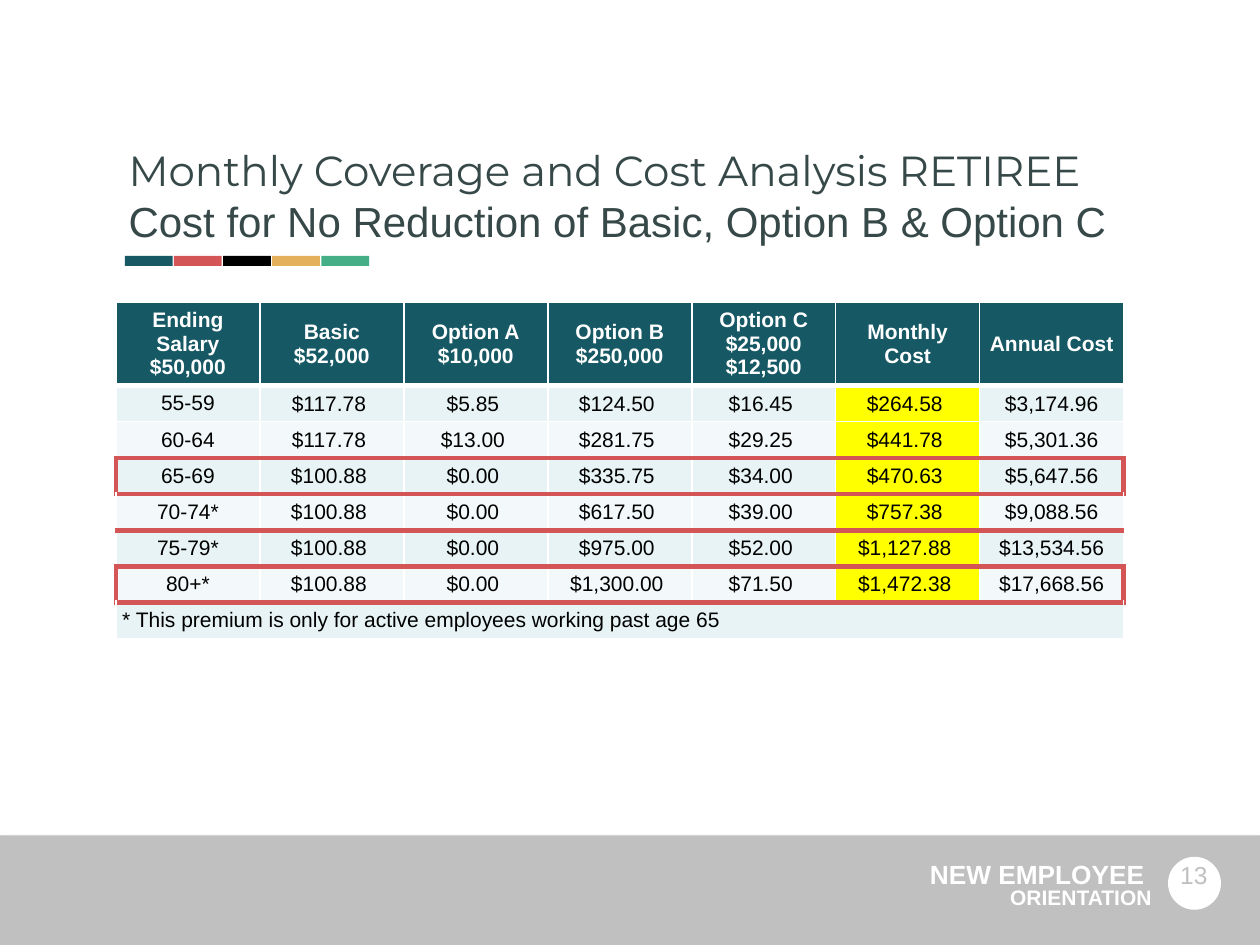
from lxml.etree import SubElement
from pptx import Presentation
from pptx.dml.color import RGBColor
from pptx.enum.shapes import MSO_SHAPE
from pptx.enum.text import MSO_ANCHOR, MSO_AUTO_SIZE, PP_ALIGN
from pptx.oxml import parse_xml
from pptx.oxml.ns import nsdecls, qn
from pptx.util import Inches, Pt

TEAL, RED, WHITE, GRAY = "165864", "D35556", "FFFFFF", "C0C0C0"
BAND_ODD, BAND_EVEN, YELLOW = "E7F3F4", "F3F9FA", "FFFF00"
ACCENTS = [TEAL, RED, "000000", "E4B05C", "46AE86"]

HEADERS = [["Ending Salary\n$50,000"], ["Basic\n$52,000"], ["Option A\n$10,000"],
           ["Option B\n$250,000"], ["Option C", "$25,000", "$12,500"],
           ["Monthly Cost"], ["Annual Cost"]]
COSTS = [
    ["55-59", "$117.78", "$5.85", "$124.50", "$16.45", "$264.58", "$3,174.96"],
    ["60-64", "$117.78", "$13.00", "$281.75", "$29.25", "$441.78", "$5,301.36"],
    ["65-69", "$100.88", "$0.00", "$335.75", "$34.00", "$470.63", "$5,647.56"],
    ["70-74*", "$100.88", "$0.00", "$617.50", "$39.00", "$757.38", "$9,088.56"],
    ["75-79*", "$100.88", "$0.00", "$975.00", "$52.00", "$1,127.88", "$13,534.56"],
    ["80+*", "$100.88", "$0.00", "$1,300.00", "$71.50", "$1,472.38", "$17,668.56"],
]
FOOTNOTE = "* This premium is only for active employees working past age 65"
BOXED_ROWS = (3, 6)
RED_RULES = (2, 3, 4, 5, 6)  # rows with a red line below them
MONTHLY_COLUMN = 5


def color(hex_value):
    return RGBColor.from_string(hex_value)


def write(frame, lines, sizes=(12,), fonts=("Arial",), ink="000000", bold=False,
          align=PP_ALIGN.LEFT, spacing=None):
    """Write one paragraph per line; sizes and fonts repeat over the lines."""
    for i, line in enumerate(lines):
        paragraph = frame.paragraphs[0] if i == 0 else frame.add_paragraph()
        paragraph.alignment = align
        if spacing:
            paragraph.line_spacing = spacing
        for j, part in enumerate(line.split("\n")):
            if j:
                paragraph.add_line_break()
            run = paragraph.add_run()
            run.text = part
            run.font.size = Pt(sizes[i % len(sizes)])
            run.font.name = fonts[i % len(fonts)]
            run.font.bold = bold
            run.font.color.rgb = color(ink)


def set_margins(target, inset):
    target.margin_left = target.margin_right = Inches(inset)
    target.margin_top = target.margin_bottom = Inches(inset)


def prepare_frame(shape, anchor=MSO_ANCHOR.TOP):
    frame = shape.text_frame
    frame.word_wrap = True
    frame.auto_size = MSO_AUTO_SIZE.NONE
    frame.vertical_anchor = anchor
    set_margins(frame, 0.05)
    return frame


def add_text(slide, box, lines, **style):
    textbox = slide.shapes.add_textbox(*map(Inches, box))
    write(prepare_frame(textbox), lines, **style)


def add_block(slide, preset, box, fill):
    block = slide.shapes.add_shape(preset, *map(Inches, box))
    block.shadow.inherit = False
    block.fill.solid()
    block.fill.fore_color.rgb = color(fill)
    block.line.fill.background()
    return block


def add_heading(slide, left, top, width, height):
    title = slide.shapes.title
    title.left, title.top = Inches(left), Inches(top)
    title.width, title.height = Inches(width), Inches(height)
    write(prepare_frame(title, MSO_ANCHOR.MIDDLE),
          ["Monthly Coverage and Cost Analysis RETIREE",
           "Cost for No Reduction of Basic, Option B & Option C"],
          sizes=(24,), fonts=("Montserrat", "Arial"), ink="364848")
    # Row of accent bars under the title
    for i, accent in enumerate(ACCENTS):
        bar = (left + 0.02 + 0.39 * i, top + height + 0.01, 0.38, 0.08)
        add_block(slide, MSO_SHAPE.RECTANGLE, bar, accent)


def set_borders(cell, **sides):
    """Draw the L, R, T and B borders, each given as (colour, points)."""
    properties = cell._tc.get_or_add_tcPr()
    for i, side in enumerate("LRTB"):
        ink, points = sides.get(side, (WHITE, 1))
        line = SubElement(properties, qn(f"a:ln{side}"), w=str(Pt(points)))
        fill = SubElement(line, qn("a:solidFill"))
        SubElement(fill, qn("a:srgbClr"), val=ink)
        properties.insert(i, line)


def fill_cell(cell, lines, fill, inset=0.05, anchor=MSO_ANCHOR.MIDDLE, **style):
    set_margins(cell, inset)
    cell.vertical_anchor = anchor
    cell.fill.solid()
    cell.fill.fore_color.rgb = color(fill)
    write(cell.text_frame, lines, **style)


def row_borders(row, column, last_column):
    red = (RED, 3)
    sides = {}
    if row == 0:
        sides["B"] = (WHITE, 3)
    elif row == 1:
        sides["T"] = (WHITE, 3)
    if row in RED_RULES:
        sides["B"] = red
    if row - 1 in RED_RULES:
        sides["T"] = red
    if row in BOXED_ROWS and column == 0:
        sides["L"] = red
    if row in BOXED_ROWS and column == last_column:
        sides["R"] = red
    return sides


def add_cost_table(slide, left, top, width, height):
    last_row, last_column = len(COSTS) + 1, len(HEADERS) - 1
    table = slide.shapes.add_table(last_row + 1, last_column + 1, Inches(left),
                                   Inches(top), Inches(width), Inches(height)).table
    row_height = 0.287
    for row in table.rows:
        row.height = Inches(row_height)
    table.rows[0].height = Inches(height - row_height * last_row)

    # Header row
    for column, header in enumerate(HEADERS):
        fill_cell(table.cell(0, column), header, TEAL, ink=WHITE, bold=True,
                  align=PP_ALIGN.CENTER)

    # Age bands: amounts between the first and last column sit without insets
    for row, values in enumerate(COSTS, start=1):
        band = BAND_ODD if row % 2 else BAND_EVEN
        for column, value in enumerate(values):
            inner = 0 < column < last_column
            fill_cell(table.cell(row, column), [value + " " if inner else value],
                      YELLOW if column == MONTHLY_COLUMN else band,
                      inset=0 if inner else 0.05,
                      anchor=MSO_ANCHOR.MIDDLE if column else MSO_ANCHOR.TOP,
                      align=PP_ALIGN.CENTER)

    # Footnote across the full width
    footnote = table.cell(last_row, 0)
    footnote.merge(table.cell(last_row, last_column))
    fill_cell(footnote, [FOOTNOTE], BAND_ODD, anchor=MSO_ANCHOR.TOP)

    for row in range(last_row + 1):
        for column in range(last_column + 1):
            set_borders(table.cell(row, column), **row_borders(row, column, last_column))


def add_footer(slide, left, top, width, height):
    band = add_block(slide, MSO_SHAPE.RECTANGLE, (left, top, width, height), GRAY)
    effects = band._element.spPr.find(qn("a:effectLst"))
    effects.append(parse_xml(
        f'<a:outerShdw {nsdecls("a")} blurRad="{Pt(3)}" dist="{Pt(1.8)}" dir="5400000" '
        'rotWithShape="0"><a:srgbClr val="000000"><a:alpha val="35000"/></a:srgbClr>'
        '</a:outerShdw>'))
    add_text(slide, (left + 0.6, top + 0.18, 8.59, 0.48), ["NEW EMPLOYEE ", "ORIENTATION"],
             sizes=(15, 12), ink=WHITE, bold=True, align=PP_ALIGN.RIGHT, spacing=0.8)
    # Page number badge
    add_block(slide, MSO_SHAPE.OVAL, (left + 9.27, top + 0.17, 0.42, 0.42), WHITE)
    add_text(slide, (left + 9.31, top + 0.15, 0.33, 0.32), ["13"], sizes=(14,),
             ink=GRAY, align=PP_ALIGN.CENTER)


def main():
    deck = Presentation()
    deck.slide_width, deck.slide_height = Inches(10), Inches(7.5)
    slide = deck.slides.add_slide(deck.slide_layouts[5])
    add_heading(slide, 0.97, 1.08, 8.56, 0.94)
    add_footer(slide, 0, 6.63, 10, 0.88)
    add_cost_table(slide, 0.92, 2.4, 8, 2.66)
    deck.save("out.pptx")


if __name__ == "__main__":
    main()
